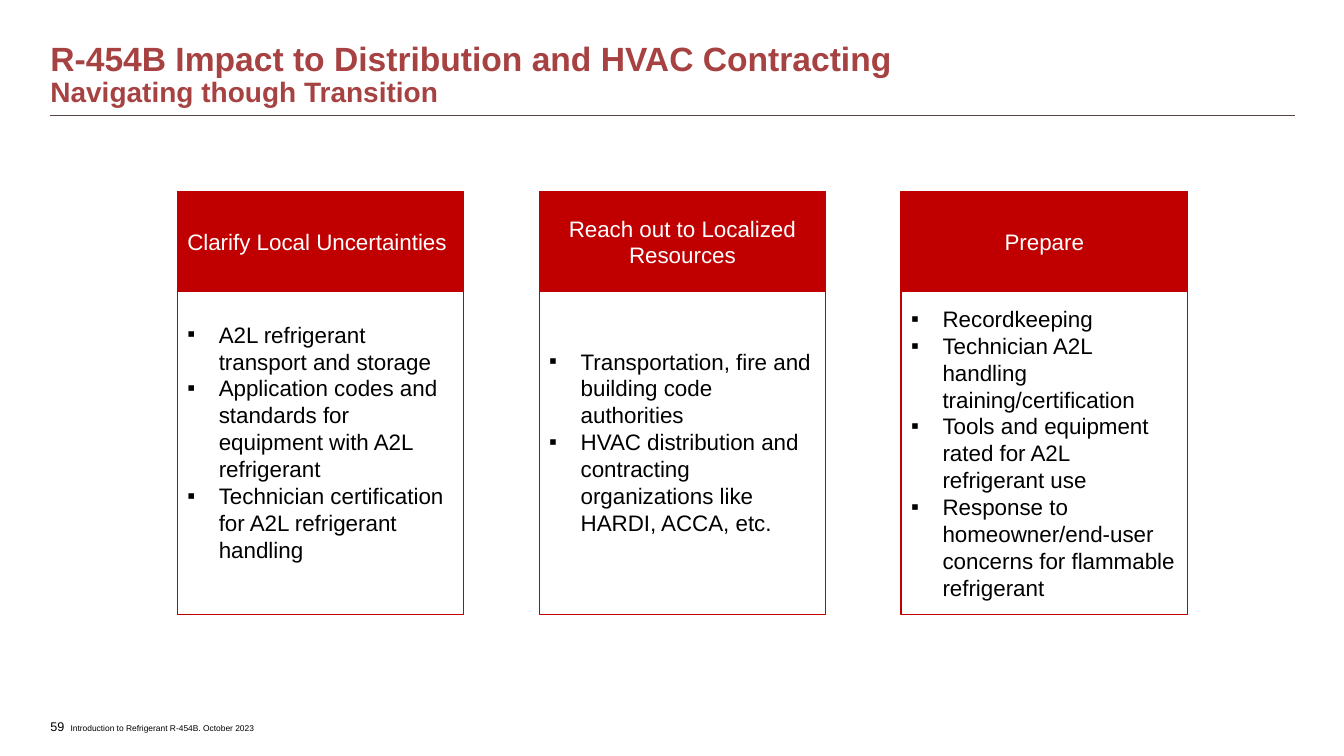
from dataclasses import dataclass

from lxml.etree import SubElement as Sub
from pptx import Presentation
from pptx.dml.color import RGBColor as Rgb
from pptx.enum.shapes import MSO_CONNECTOR as Link, MSO_SHAPE as Form
from pptx.enum.text import MSO_ANCHOR as Anchor, PP_ALIGN as Align
from pptx.oxml.ns import qn
from pptx.util import Pt


@dataclass(frozen=True)
class Theme:
    """Hold the colours, type sizes and font of the slide."""
    font: str = "Arial"
    title: Rgb = Rgb(0xA6, 0x42, 0x41)
    rule: Rgb = Rgb(0x52, 0x47, 0x43)
    red: Rgb = Rgb(0xC0, 0x00, 0x00)
    white: Rgb = Rgb(0xFF, 0xFF, 0xFF)
    black: Rgb = Rgb(0x00, 0x00, 0x00)
    head: int = 24
    sub: int = 20
    body: int = 16
    page: int = 9
    note: int = 6


THEME = Theme()
TAIL = 16

CARDS = [
    ("Clarify Local Uncertainties", Align.LEFT, TAIL, [
        "A2L refrigerant transport and storage",
        "Application codes and standards for equipment with A2L refrigerant",
        "Technician certification for A2L refrigerant handling",
    ]),
    ("Reach out to Localized Resources", Align.CENTER, TAIL, [
        "Transportation, fire and building code authorities",
        "HVAC distribution and contracting organizations like HARDI, ACCA, etc.",
    ]),
    ("Prepare", Align.CENTER, 0, [
        "Recordkeeping",
        "Technician A2L handling training/certification",
        "Tools and equipment rated for A2L refrigerant use",
        "Response to homeowner/end-user concerns for flammable refrigerant",
    ]),
]


def write(frame, text, size=THEME.body, color=THEME.black, bold=False,
          align=Align.LEFT, space=None, bullet=None):
    """Add one formatted paragraph to a text frame."""
    para = frame.paragraphs[0] if not frame.text else frame.add_paragraph()
    para.alignment = align
    if space:
        para.line_spacing = space
    if bullet:
        props = para._p.get_or_add_pPr()
        props.set("marL", str(Pt(22.5)))
        props.set("indent", str(-Pt(22.5)))
        Sub(props, qn("a:buFont"), typeface=THEME.font)
        Sub(props, qn("a:buChar"), char=bullet)
    run = para.add_run()
    run.text = text
    font = run.font
    font.name, font.size, font.bold = THEME.font, Pt(size), bold
    font.color.rgb = color


def label(slide, box, anchor):
    """Add a text box without insets and return its frame."""
    frame = slide.shapes.add_textbox(*map(Pt, box)).text_frame
    frame.word_wrap = True
    frame.vertical_anchor = anchor
    frame.margin_left = frame.margin_right = 0
    frame.margin_top = frame.margin_bottom = 0
    return frame


def panel(slide, box, fill=None):
    """Add a red-edged rectangle and return its frame."""
    shape = slide.shapes.add_shape(Form.RECTANGLE, *map(Pt, box))
    shape.shadow.inherit = False
    if fill:
        shape.fill.solid()
        shape.fill.fore_color.rgb = fill
    else:
        shape.fill.background()
    shape.line.color.rgb = THEME.red
    shape.line.width = Pt(1)
    frame = shape.text_frame
    frame.word_wrap = True
    frame.vertical_anchor = Anchor.MIDDLE
    return frame


def header(slide, x, y, w, h):
    """Place the two-line title and the rule below it."""
    frame = label(slide, (x, y, w, h), Anchor.BOTTOM)
    look = dict(color=THEME.title, bold=True, space=0.9)
    write(frame, "R-454B Impact to Distribution and HVAC Contracting",
          size=THEME.head, **look)
    write(frame, "Navigating though Transition", size=THEME.sub, **look)
    low = y + h + 5
    rule = slide.shapes.add_connector(
        Link.STRAIGHT, *map(Pt, (x, low, x + w, low)))
    rule.line.color.rgb = THEME.rule
    rule.line.width = Pt(0.75)
    Sub(rule._element.spPr, qn("a:effectLst"))


def card(slide, x, y, w, h, name, align, tail, items):
    """Place a filled heading above a bulleted panel."""
    top = 71
    write(panel(slide, (x, y, w, top), THEME.red), name,
          color=THEME.white, align=align)
    frame = panel(slide, (x, y + top, w, h - top))
    frame.margin_bottom = Pt(3.6 + tail)
    for item in items:
        write(frame, item, bullet="▪")


def cards(slide, x, y, w, h):
    """Spread the cards evenly over the box."""
    wide = 204.5
    step = (w - wide) / (len(CARDS) - 1)
    for i, data in enumerate(CARDS):
        card(slide, x + i * step, y, wide, h, *data)


def footer(slide, x, y, w, h):
    """Place the page number and the deck name."""
    write(label(slide, (x, y, 14, h), Anchor.MIDDLE), "59", size=THEME.page)
    write(label(slide, (x + 14.4, y + 5.7, w - 14.4, 7.2), Anchor.TOP),
          "Introduction to Refrigerant R-454B. October 2023", size=THEME.note)


def main():
    """Build the slide and save it."""
    deck = Presentation()
    deck.slide_width, deck.slide_height = Pt(960), Pt(540)
    slide = deck.slides.add_slide(deck.slide_layouts[6])
    header(slide, 36, 15, 889, 62.8)
    cards(slide, 126.7, 137, 721.5, 302)
    footer(slide, 36, 510.5, 173, 17)
    deck.save("out.pptx")


if __name__ == "__main__":
    main()
